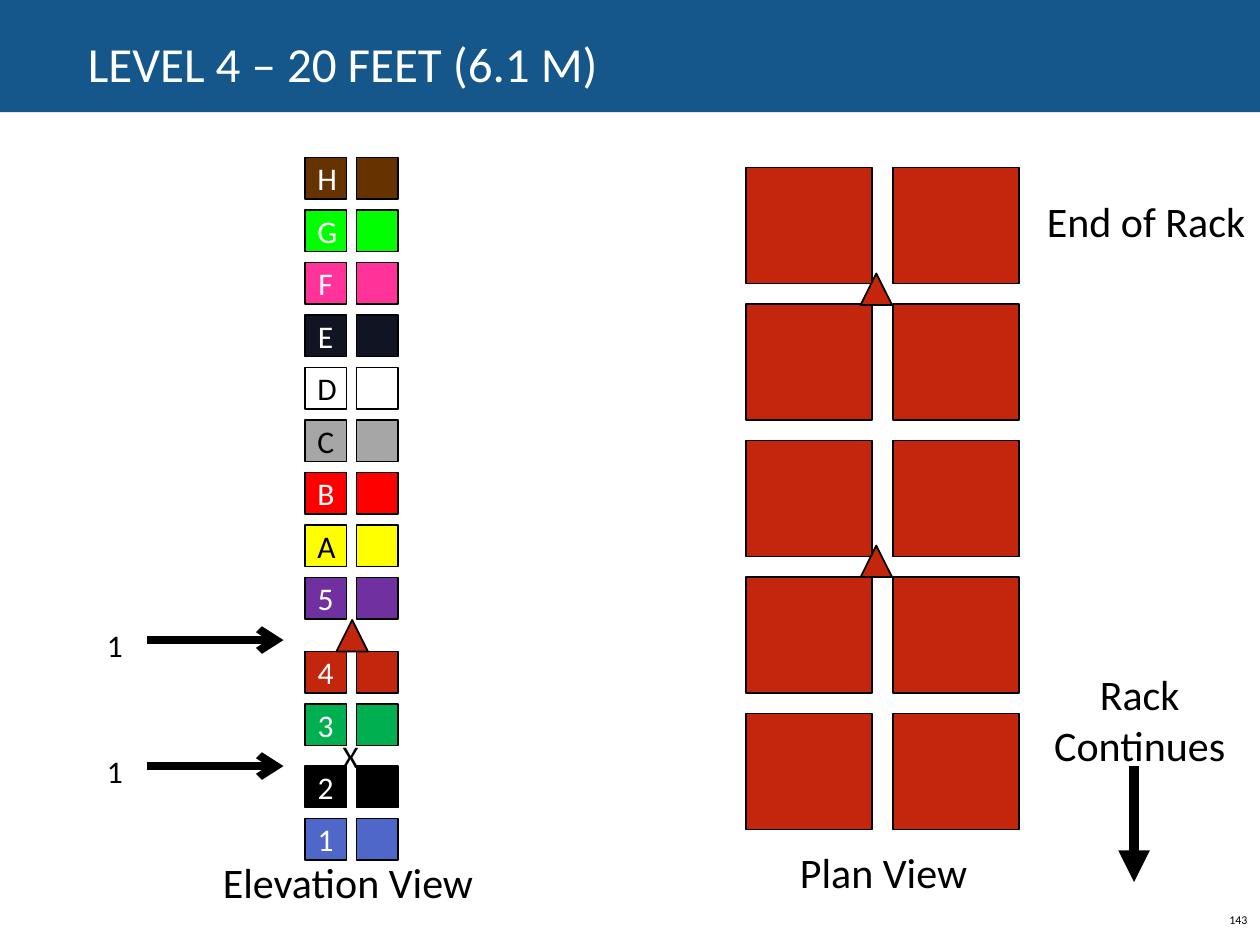
from lxml import etree
from pptx import Presentation
from pptx.dml.color import RGBColor
from pptx.enum.shapes import MSO_CONNECTOR, MSO_SHAPE
from pptx.enum.text import MSO_ANCHOR, MSO_AUTO_SIZE, PP_ALIGN
from pptx.oxml.ns import qn
from pptx.util import Inches, Pt

RECTANGLE = MSO_SHAPE.RECTANGLE
TRIANGLE = MSO_SHAPE.ISOSCELES_TRIANGLE
STRAIGHT = MSO_CONNECTOR.STRAIGHT
TOP, MIDDLE = MSO_ANCHOR.TOP, MSO_ANCHOR.MIDDLE
LEFT, CENTER, RIGHT = PP_ALIGN.LEFT, PP_ALIGN.CENTER, PP_ALIGN.RIGHT
GROW = MSO_AUTO_SIZE.SHAPE_TO_FIT_TEXT

BLACK, WHITE, RED = "000000", "FFFFFF", "C3260C"
color = RGBColor.from_string


def add_block(kind, left, top, width, height, fill, outlined=True):
    block = page.shapes.add_shape(
        kind, Inches(left), Inches(top), Inches(width), Inches(height))
    block.shadow.inherit = False
    block.fill.solid()
    block.fill.fore_color.rgb = color(fill)
    if outlined:
        block.line.color.rgb = color(BLACK)
        block.line.width = Pt(1)
    else:
        block.line.fill.background()
    return block


def write(box, text, size, ink=BLACK, align=LEFT, anchor=TOP, wrap=True):
    frame = box.text_frame
    frame.text = text
    frame.word_wrap = wrap
    frame.vertical_anchor = anchor
    para = frame.paragraphs[0]
    para.alignment = align
    span = para.runs[0]
    span.font.name = "Calibri"
    span.font.size = Pt(size)
    span.font.color.rgb = color(ink)
    return frame


deck = Presentation()
deck.slide_width, deck.slide_height = Inches(10), Inches(7.5)
page = deck.slides.add_slide(deck.slide_layouts[6])

# Title band and slide number
add_block(RECTANGLE, 0, 0, 10, 0.89, "15578A", outlined=False)
title = page.shapes.add_textbox(Inches(0.6), Inches(-0.09), Inches(9), Inches(1.25))
frame = write(title, "LEVEL 4 – 20 FEET (6.1 M)", 28, WHITE, anchor=MIDDLE)
frame.paragraphs[0].line_spacing = 0.85

number = page.shapes.add_textbox(Inches(9.6), Inches(7.1), Inches(0.4), Inches(0.4))
frame = write(number, "143", 6.8, align=RIGHT, anchor=MIDDLE)
frame.margin_left = frame.margin_top = frame.margin_bottom = Inches(0.05)

# Elevation view: groups of levels, each level a labelled and a plain square
level_groups = [
    (1.25, [("H", "663300", WHITE), ("G", "00FF00", WHITE),
            ("F", "FF3399", WHITE), ("E", "111422", WHITE),
            ("D", "FFFFFF", BLACK), ("C", "A6A6A6", BLACK),
            ("B", "FF0000", WHITE), ("A", "FFFF00", BLACK),
            ("5", "7030A0", WHITE)]),
    (5.17, [("4", RED, WHITE), ("3", "00B050", WHITE)]),
    (6.08, [("2", BLACK, WHITE), ("1", "4E67C8", WHITE)]),
]
level_pitch = 5 / 12
for group_top, levels in level_groups:
    for index, (label, fill, ink) in enumerate(levels):
        top = group_top + index * level_pitch
        square = add_block(RECTANGLE, 2.42, top, 0.33, 0.33, fill)
        write(square, label, 18, ink, CENTER, MIDDLE)
        add_block(RECTANGLE, 2.83, top, 0.33, 0.33, fill)

# Plan view: two columns of five rack bays
for column in range(2):
    for row in range(5):
        add_block(RECTANGLE, 5.92 + column * 7 / 6, 1.33 + row * 13 / 12,
                  1, 0.92, RED)

# Triangle markers in both views
for left, top in [(6.83, 2.17), (6.83, 4.33), (2.67, 4.92)]:
    add_block(TRIANGLE, left, top, 0.25, 0.25, RED)

# Captions and marks
captions = [
    ("Elevation View", 1.67, 6.75, 2.27, 0.5, 24, LEFT, False),
    ("Plan View", 6.25, 6.67, 1.59, 0.5, 24, LEFT, False),
    ("End of Rack", 8.21, 1.5, 1.82, 0.5, 24, LEFT, False),
    ("Rack Continues", 8.17, 5.26, 1.75, 0.91, 24, CENTER, True),
    ("X", 2.62, 5.8, 0.33, 0.4, 18, LEFT, True),
    ("1", 0.75, 5.92, 0.42, 0.4, 18, LEFT, True),
    ("1", 0.75, 4.92, 0.42, 0.4, 18, LEFT, True),
]
for text, left, top, width, height, size, align, wrap in captions:
    box = page.shapes.add_textbox(
        Inches(left), Inches(top), Inches(width), Inches(height))
    frame = write(box, text, size, align=align, wrap=wrap)
    frame.auto_size = GROW

# Arrows: rack direction and the two level pointers
arrows = [
    (9, 6.08, 9, 7, 6, "triangle"),
    (1.17, 6.08, 2.25, 6.08, 4.5, "arrow"),
    (1.17, 5.08, 2.25, 5.08, 4.5, "arrow"),
]
for x1, y1, x2, y2, width, head in arrows:
    arrow = page.shapes.add_connector(
        STRAIGHT, Inches(x1), Inches(y1), Inches(x2), Inches(y2))
    arrow.line.color.rgb = color(BLACK)
    arrow.line.width = Pt(width)
    etree.SubElement(arrow.line._get_or_add_ln(), qn("a:tailEnd"), type=head)
    etree.SubElement(arrow._element.spPr, qn("a:effectLst"))

deck.save("out.pptx")
